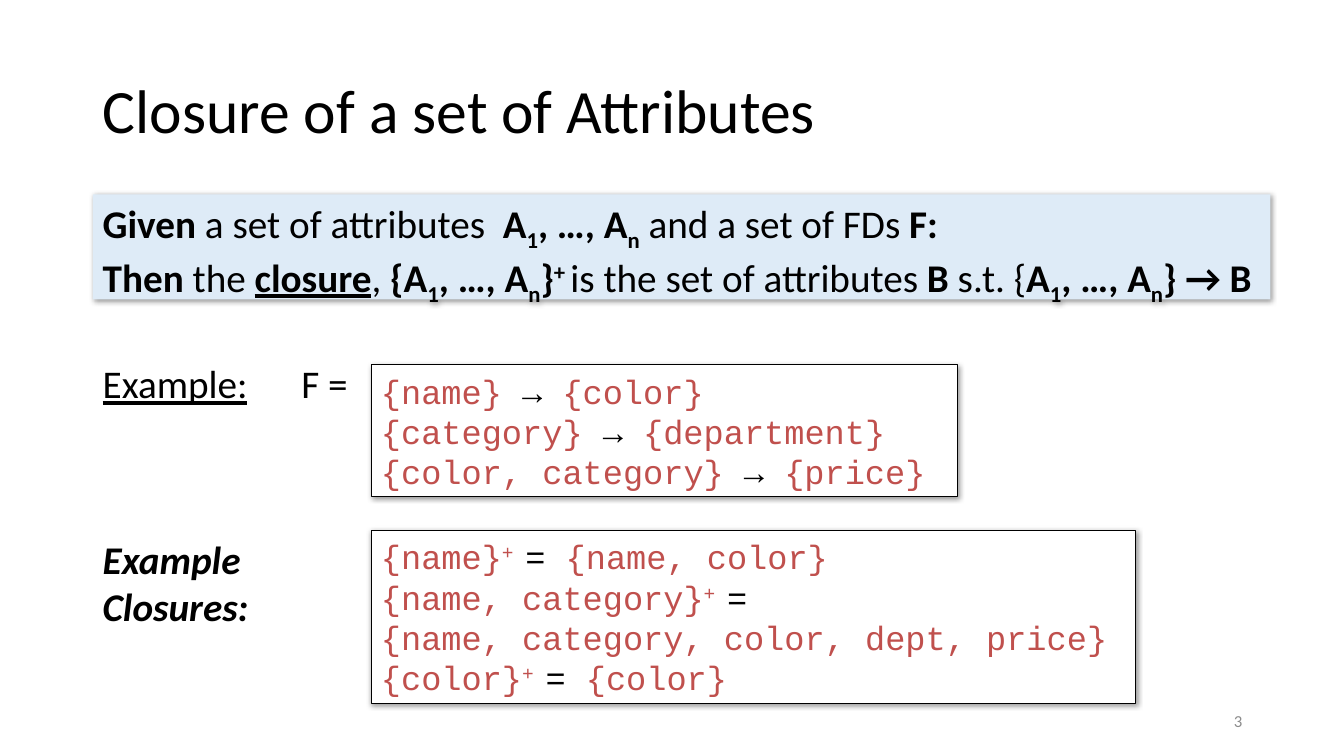
import pptx
import pptx.util
import pptx.dml.color
import pptx.enum.shapes
import pptx.enum.text
import pptx.oxml
import pptx.oxml.ns
from dataclasses import dataclass
from typing import Any, Optional

Inches = pptx.util.Inches
Pt = pptx.util.Pt
Align = pptx.enum.text.PP_ALIGN
Anchor = pptx.enum.text.MSO_ANCHOR

HUES = {"black": "000000", "white": "FFFFFF", "sky": "DEEBF7",
        "red": "C0504D", "gray": "8C8C8C"}
SANS, MONO = "Calibri", "Courier New"


@dataclass
class Run:
    text: str
    marks: str = ""
    hue: Optional[str] = None
    base: int = 0


@dataclass
class Box:
    left: float
    top: float
    width: float
    height: float
    lines: list[list[Run]]
    size: int = 28
    face: str = SANS
    hue: str = "black"
    fill: Optional[str] = None
    edge: bool = False
    mid: bool = False
    align: Any = Align.LEFT
    tab: float = 0


def tint(hue: str) -> pptx.dml.color.RGBColor:
    return pptx.dml.color.RGBColor.from_string(HUES[hue])


def write(frame: Any, box: Box) -> None:
    frame.word_wrap = True
    frame.auto_size = pptx.enum.text.MSO_AUTO_SIZE.NONE
    frame.vertical_anchor = Anchor.MIDDLE if box.mid else Anchor.TOP
    for i, line in enumerate(box.lines):
        para = frame.add_paragraph() if i else frame.paragraphs[0]
        para.alignment = box.align
        para.font.name = box.face
        para.font.size = Pt(box.size)
        para.font.color.rgb = tint(box.hue)
        same = len({part.marks for part in line}) == 1
        if same:
            style(para.font, line[0].marks)
        for part in line:
            run = para.add_run()
            run.text = part.text
            if not same:
                style(run.font, part.marks)
            if part.hue:
                run.font.color.rgb = tint(part.hue)
            if part.base:
                run._r.get_or_add_rPr().set("baseline", str(part.base * 1000))
        if box.tab:
            tabs = pptx.oxml.parse_xml(
                f'<a:tabLst {pptx.oxml.ns.nsdecls("a")}>'
                f'<a:tab pos="{Inches(box.tab)}" algn="l"/></a:tabLst>')
            para._p.get_or_add_pPr().insert(0, tabs)


def style(font: Any, marks: str) -> None:
    font.bold = "b" in marks
    font.italic = "i" in marks
    font.underline = "u" in marks


def shade(shape: Any) -> None:
    shape.shadow.inherit = False
    glow = pptx.oxml.parse_xml(
        f'<a:outerShdw {pptx.oxml.ns.nsdecls("a")} blurRad="{Pt(4)}" '
        f'dist="{Pt(1)}" dir="2700000" algn="tl" rotWithShape="0">'
        f'<a:srgbClr val="{HUES["black"]}"><a:alpha val="40000"/></a:srgbClr>'
        '</a:outerShdw>')
    shape._element.spPr.find(pptx.oxml.ns.qn("a:effectLst")).append(glow)


def draw(slide: Any, box: Box) -> None:
    place = [Inches(n) for n in (box.left, box.top, box.width, box.height)]
    if box.fill:
        kind = pptx.enum.shapes.MSO_SHAPE.RECTANGLE
        shape = slide.shapes.add_shape(kind, *place)
        shape.fill.solid()
        shape.fill.fore_color.rgb = tint(box.fill)
        if box.edge:
            shape.line.color.rgb = tint("black")
            shape.line.width = Pt(0.75)
        else:
            shape.line.fill.background()
        shade(shape)
    else:
        shape = slide.shapes.add_textbox(*place)
    write(shape.text_frame, box)


def series(lead: str) -> list[Run]:
    return [Run(lead, "b"), Run("1", "b", base=-25),
            Run(", …, A", "b"), Run("n", "b", base=-25)]


def rule(left: str, right: str) -> list[Run]:
    return [Run(left + " "), Run("→ ", hue="black"), Run(right)]


def hull(left: str, right: str = "") -> list[Run]:
    line = [Run(left), Run("+ ", base=30),
            Run("= " if right else "=", hue="black")]
    return line + [Run(right)] if right else line


GIVEN = [Run("Given", "b"), Run(" a set of attributes  "), *series("A"),
         Run(" and a set of FDs "), Run("F:", "b")]
THEN = [Run("Then ", "b"), Run("the "), Run("closure", "bu"), Run(", "),
        *series("{A"), Run("}", "b"), Run("+ ", "b", base=30),
        Run("is the set of attributes "), Run("B ", "b"), Run("s.t. {"),
        *series("A"), Run("} → B", "b")]
RULES = [rule("{name}", "{color}"), rule("{category}", "{department}"),
         rule("{color, category}", "{price}")]
HULLS = [hull("{name}", "{name, color}"), hull("{name, category}"),
         [Run("{name, category, color, dept, price}")],
         hull("{color}", "{color}")]

TITLE = Box(0.92, 0.4, 11.5, 1.45, [[Run("Closure of a set of Attributes")]],
            size=44, mid=True)
BOXES = [
    Box(9.42, 6.95, 3, 0.4, [[Run("3")]], size=12, hue="gray", mid=True,
        align=Align.RIGHT),
    Box(0.92, 1.93, 11.68, 1.04, [GIVEN, THEN], fill="sky"),
    Box(3.68, 3.62, 5.82, 1.31, RULES, 24, MONO, "red", "white", True, True),
    Box(0.92, 3.52, 2.66, 0.57, [[Run("Example:", "u"), Run("\tF =")]],
        tab=1.97),
    Box(0.92, 5.26, 1.9, 1.04, [[Run("Example Closures:", "bi")]]),
    Box(3.68, 5.26, 7.58, 1.72, HULLS, 24, MONO, "red", "white", True, True),
]


def main() -> None:
    deck = pptx.Presentation()
    deck.slide_width, deck.slide_height = Inches(13.33), Inches(7.5)
    slide = deck.slides.add_slide(deck.slide_layouts[5])
    head = slide.shapes.title
    head.left, head.top = Inches(TITLE.left), Inches(TITLE.top)
    head.width, head.height = Inches(TITLE.width), Inches(TITLE.height)
    write(head.text_frame, TITLE)
    head.text_frame.paragraphs[0].line_spacing = 0.9
    for box in BOXES:
        draw(slide, box)
    deck.save("out.pptx")


if __name__ == "__main__":
    main()
